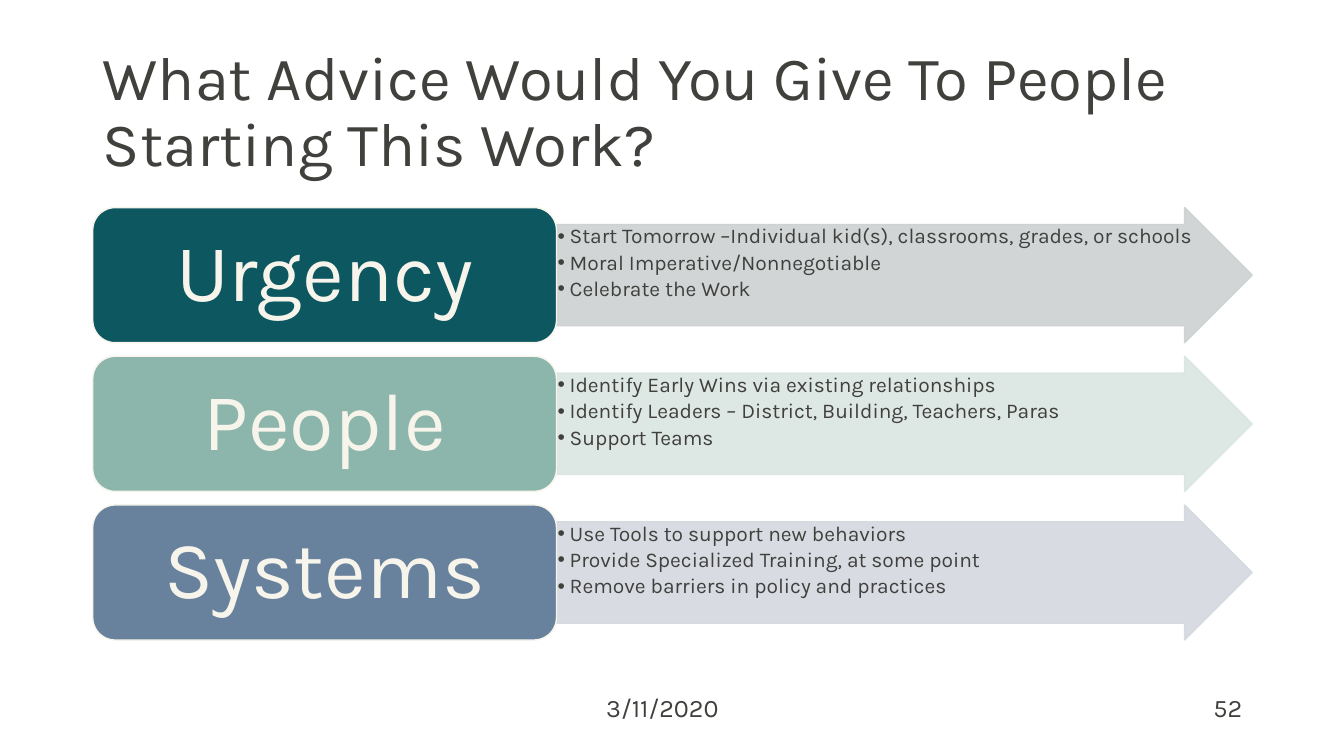
"""Build a slide of advice in three rows, each a labelled box with an arrow and a list."""
from dataclasses import dataclass

from lxml import etree
from pptx import Presentation
from pptx import util as u
from pptx.dml.color import RGBColor
from pptx.enum import shapes, text
from pptx.oxml import ns

FONT, INK, CREAM = "Karla", "40403D", "F7F5EB"
LEFT, TOP, STEP, HIGH = 0.92, 2.06, 1.475, 1.34
BOX_WIDE, ARROW_WIDE, LIST_WIDE = 4.6, 6.9, 6.4
LIST_DROP, LIST_HIGH = 0.17, 1.01
FOOT_TOP, FOOT_WIDE, FOOT_HIGH = 6.82, 3, 0.4


@dataclass
class Row:
    label: str
    box: str
    arrow: str
    points: list[str]


@dataclass
class Foot:
    words: str
    left: float
    align: text.PP_ALIGN


ROWS = [
    Row("Urgency", "0D5761", "CCD1D2", [
        "Start Tomorrow –Individual kid(s), classrooms, grades, or schools",
        "Moral Imperative/Nonnegotiable",
        "Celebrate the Work"]),
    Row("People", "8CB5AB", "DAE5E2", [
        "Identify Early Wins via existing relationships",
        "Identify Leaders – District, Building, Teachers, Paras",
        "Support Teams"]),
    Row("Systems", "68829E", "D4D8DF", [
        "Use Tools to support new behaviors",
        "Provide Specialized Training, at some point",
        "Remove barriers in policy and practices"]),
]
FEET = [
    Foot("3/11/2020", 5.07, text.PP_ALIGN.CENTER),
    Foot("52", 9.42, text.PP_ALIGN.RIGHT),
]


def paint(color, code: str) -> None:
    color.rgb = RGBColor.from_string(code)


def place(shape, left: float, top: float, wide: float, high: float) -> None:
    shape.left, shape.top = u.Inches(left), u.Inches(top)
    shape.width, shape.height = u.Inches(wide), u.Inches(high)


def add_bullet(para) -> None:
    props = para._p.get_or_add_pPr()
    props.set("marL", str(u.Inches(0.12)))
    props.set("indent", str(u.Inches(-0.12)))
    etree.SubElement(props, ns.qn("a:buChar")).set("char", "•")


def write(shape, lines: list[str], size: float, color: str = INK,
          align=text.PP_ALIGN.LEFT, anchor=text.MSO_ANCHOR.TOP,
          inset: tuple[float, float] = (0.1, 0.05), space: float = 1,
          after: float = 0, bullet: bool = False) -> None:
    frame = shape.text_frame
    frame.word_wrap = True
    frame.auto_size = text.MSO_AUTO_SIZE.NONE
    frame.vertical_anchor = anchor
    frame.margin_left = frame.margin_right = u.Inches(inset[0])
    frame.margin_top = frame.margin_bottom = u.Inches(inset[1])
    for i, line in enumerate(lines):
        para = frame.add_paragraph() if i else frame.paragraphs[0]
        if bullet:
            para.level = 1
            add_bullet(para)
        para.alignment, para.line_spacing = align, space
        para.space_before, para.space_after = u.Pt(0), u.Pt(after)
        run = para.add_run()
        run.text = line
        run.font.name, run.font.size, run.font.bold = FONT, u.Pt(size), False
        paint(run.font.color, color)


def add_block(slide, kind, left: float, top: float, wide: float,
              fill: str, edge: str):
    block = slide.shapes.add_shape(kind, 0, 0, 0, 0)
    place(block, left, top, wide, HIGH)
    block.shadow.inherit = False
    block.fill.solid()
    paint(block.fill.fore_color, fill)
    paint(block.line.color, edge)
    block.line.width = u.Pt(1)
    return block


def fade(shape, share: int) -> None:
    for color in shape._element.spPr.iter(ns.qn("a:srgbClr")):
        etree.SubElement(color, ns.qn("a:alpha")).set("val", str(share * 1000))


def add_row(slide, row: Row, top: float, body) -> None:
    mid = LEFT + BOX_WIDE
    arrow = add_block(slide, shapes.MSO_SHAPE.RIGHT_ARROW, mid, top,
                      ARROW_WIDE, row.arrow, row.arrow)
    arrow.adjustments[0], arrow.adjustments[1] = 0.75, 0.5
    fade(arrow, 90)
    slide.shapes._spTree.append(body._element)
    place(body, mid, top + LIST_DROP, LIST_WIDE, LIST_HIGH)
    write(body, row.points, 15, inset=(0.01, 0.01), space=0.9, after=2.6,
          bullet=True)
    box = add_block(slide, shapes.MSO_SHAPE.ROUNDED_RECTANGLE, LEFT, top,
                    BOX_WIDE, row.box, CREAM)
    write(box, [row.label], 58, CREAM, text.PP_ALIGN.CENTER,
          text.MSO_ANCHOR.MIDDLE, (0.24, 0.12), 0.9)


def main() -> None:
    deck = Presentation()
    deck.slide_width, deck.slide_height = u.Inches(13.33), u.Inches(7.5)
    slide = deck.slides.add_slide(deck.slide_layouts.get_by_name("Comparison"))
    title, *bodies = slide.placeholders
    place(title, LEFT, 0.4, 11.5, 1.45)
    write(title, ["What Advice Would You Give To People Starting This Work?"],
          44, anchor=text.MSO_ANCHOR.MIDDLE, space=0.9)
    for i, (row, body) in enumerate(zip(ROWS, bodies)):
        add_row(slide, row, TOP + i * STEP, body)
    for spare in bodies[len(ROWS):]:
        spare._element.getparent().remove(spare._element)
    for foot in FEET:
        note = slide.shapes.add_textbox(0, 0, 0, 0)
        place(note, foot.left, FOOT_TOP, FOOT_WIDE, FOOT_HIGH)
        write(note, [foot.words], 18, align=foot.align)
    deck.save("out.pptx")


if __name__ == "__main__":
    main()
